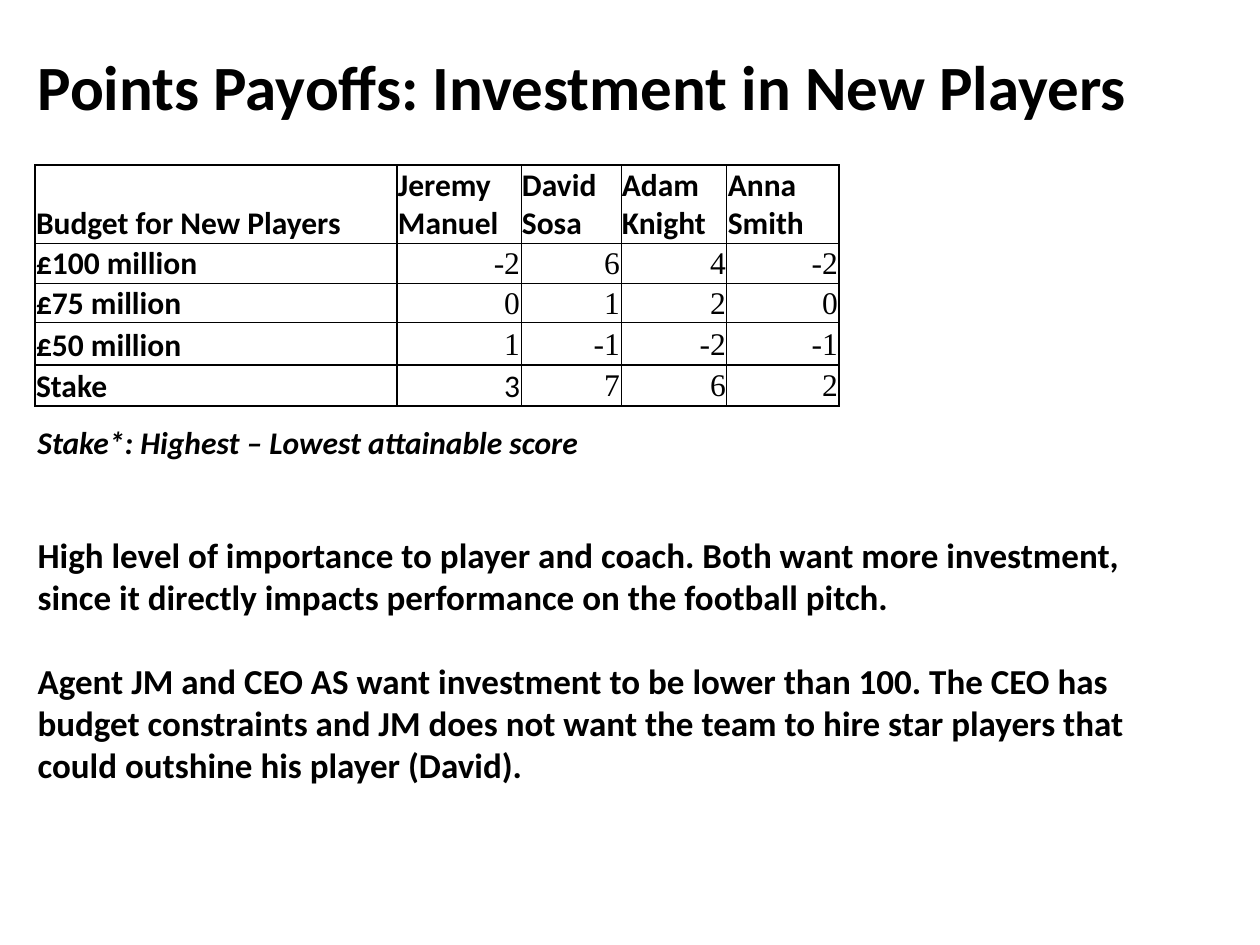
import dataclasses
import typing

import lxml.etree
import pptx
import pptx.dml.color
import pptx.enum.text
import pptx.oxml.ns
import pptx.util

BLACK = pptx.dml.color.RGBColor(0, 0, 0)
SANS, SERIF = "Calibri", "Times New Roman"
ALIGN = pptx.enum.text.PP_ALIGN
ANCHOR = pptx.enum.text.MSO_ANCHOR
SCALE = 914400 / 126  # EMU in one px


@dataclasses.dataclass(frozen=True)
class Box:
    left: int
    top: int
    width: int
    height: int


@dataclasses.dataclass(frozen=True)
class Style:
    size: int
    font: str = SANS
    bold: bool = True
    italic: bool = False


HEAD, BODY = Style(36), Style(20)
NOTE, LABEL = Style(18, italic=True), Style(18)
VALUE, PLAIN = Style(18, SERIF, False), Style(18, bold=False)

COLS = [362, 124, 100, 106, 112]
ROWS = [77, 40, 40, 42, 41]
DATA = [
    ["Budget for New Players", "Jeremy Manuel", "David Sosa",
     "Adam Knight", "Anna Smith"],
    ["£100 million", "-2", "6", "4", "-2"],
    ["£75 million", "0", "1", "2", "0"],
    ["£50 million", "1", "-1", "-2", "-1"],
    ["Stake", "3", "7", "6", "2"],
]
# Grid lines drawn at 1 pt; the others are 0.5 pt
THICK_X, THICK_Y = {0, 1, 5}, {0, 4, 5}


def px(num: int) -> int:
    return int(num * SCALE)


def place(shape: typing.Any, box: Box) -> None:
    shape.left, shape.top = px(box.left), px(box.top)
    shape.width, shape.height = px(box.width), px(box.height)


def write(para: typing.Any, text: str, style: Style, align: typing.Any) -> None:
    para.alignment = align
    run = para.add_run()
    run.text = text
    font = run.font
    font.size, font.name = pptx.util.Pt(style.size), style.font
    font.bold, font.italic = style.bold, style.italic
    font.color.rgb = BLACK


def fill(shape: typing.Any, box: Box, texts: list[str], style: Style,
         align: typing.Any, anchor: typing.Any, gap: int = 0) -> None:
    """Place a text shape and write its paragraphs, spaced by gap points."""
    place(shape, box)
    frame = shape.text_frame
    frame.word_wrap = True
    frame.auto_size = pptx.enum.text.MSO_AUTO_SIZE.NONE
    frame.vertical_anchor = anchor
    for i, text in enumerate(texts):
        para = frame.add_paragraph() if i else frame.paragraphs[0]
        write(para, text, style, align)
        para.space_before = pptx.util.Pt(gap if i else 0)


def unlist(shape: typing.Any) -> None:
    """Take bullets and hanging indents off a list."""
    for para in shape.text_frame.paragraphs:
        props = para._p.get_or_add_pPr()
        props.set("marL", "0")
        props.set("indent", "0")
        lxml.etree.SubElement(props, pptx.oxml.ns.qn("a:buNone"))


def edge(cell: typing.Any, side: str, thick: bool) -> None:
    qn = pptx.oxml.ns.qn
    props = cell._tc.get_or_add_tcPr()
    width = pptx.util.Pt(1 if thick else 0.5)
    line = lxml.etree.SubElement(props, qn("a:ln" + side), w=str(int(width)))
    paint = lxml.etree.SubElement(line, qn("a:solidFill"))
    lxml.etree.SubElement(paint, qn("a:srgbClr"), val=str(BLACK))


def draw_cell(cell: typing.Any, row: int, col: int, text: str) -> None:
    label = row == 0 or col == 0
    plain = (row, col) == (4, 1)
    style = LABEL if label else PLAIN if plain else VALUE
    cell.margin_left = cell.margin_right = cell.margin_top = px(1)
    cell.margin_bottom = 0
    cell.vertical_anchor = ANCHOR.BOTTOM if label or plain else ANCHOR.MIDDLE
    write(cell.text_frame.paragraphs[0], text, style,
          ALIGN.LEFT if label else ALIGN.RIGHT)
    edge(cell, "L", col in THICK_X)
    edge(cell, "R", col + 1 in THICK_X)
    edge(cell, "T", row in THICK_Y)
    edge(cell, "B", row + 1 in THICK_Y)
    cell.fill.background()


def draw_grid(slide: typing.Any, left: int, top: int) -> None:
    grid = slide.shapes.add_table(
        len(ROWS), len(COLS), px(left), px(top),
        px(sum(COLS)), px(sum(ROWS))).table
    grid.first_row = grid.horz_banding = False
    for col, width in zip(grid.columns, COLS):
        col.width = px(width)
    for row, height in zip(grid.rows, ROWS):
        row.height = px(height)
    for r, line in enumerate(DATA):
        for c, text in enumerate(line):
            draw_cell(grid.cell(r, c), r, c, text)


def main() -> None:
    deck = pptx.Presentation()
    deck.slide_width, deck.slide_height = px(1260), px(945)
    slide = deck.slides.add_slide(deck.slide_layouts[1])

    # Title
    fill(slide.shapes.title, Box(15, 6, 1134, 158),
         ["Points Payoffs: Investment in New Players"],
         HEAD, ALIGN.CENTER, ANCHOR.MIDDLE)

    # Comments
    body = slide.placeholders[1]
    fill(body, Box(25, 527, 1160, 264), [
        "High level of importance to player and coach. Both want more "
        "investment, since it directly impacts performance on the football "
        "pitch.",
        "Agent JM and CEO AS want investment to be lower than 100. The CEO "
        "has budget constraints and JM does not want the team to hire star "
        "players that could outshine his player (David).",
    ], BODY, ALIGN.LEFT, ANCHOR.TOP, gap=24)
    unlist(body)

    # Payoff table
    draw_grid(slide, 35, 165)

    # Note below the table
    note = slide.shapes.add_textbox(0, 0, 0, 0)
    fill(note, Box(25, 363, 640, 158),
         ["Stake*: Highest – Lowest attainable score"],
         NOTE, ALIGN.LEFT, ANCHOR.MIDDLE)

    deck.save("out.pptx")


if __name__ == "__main__":
    main()
